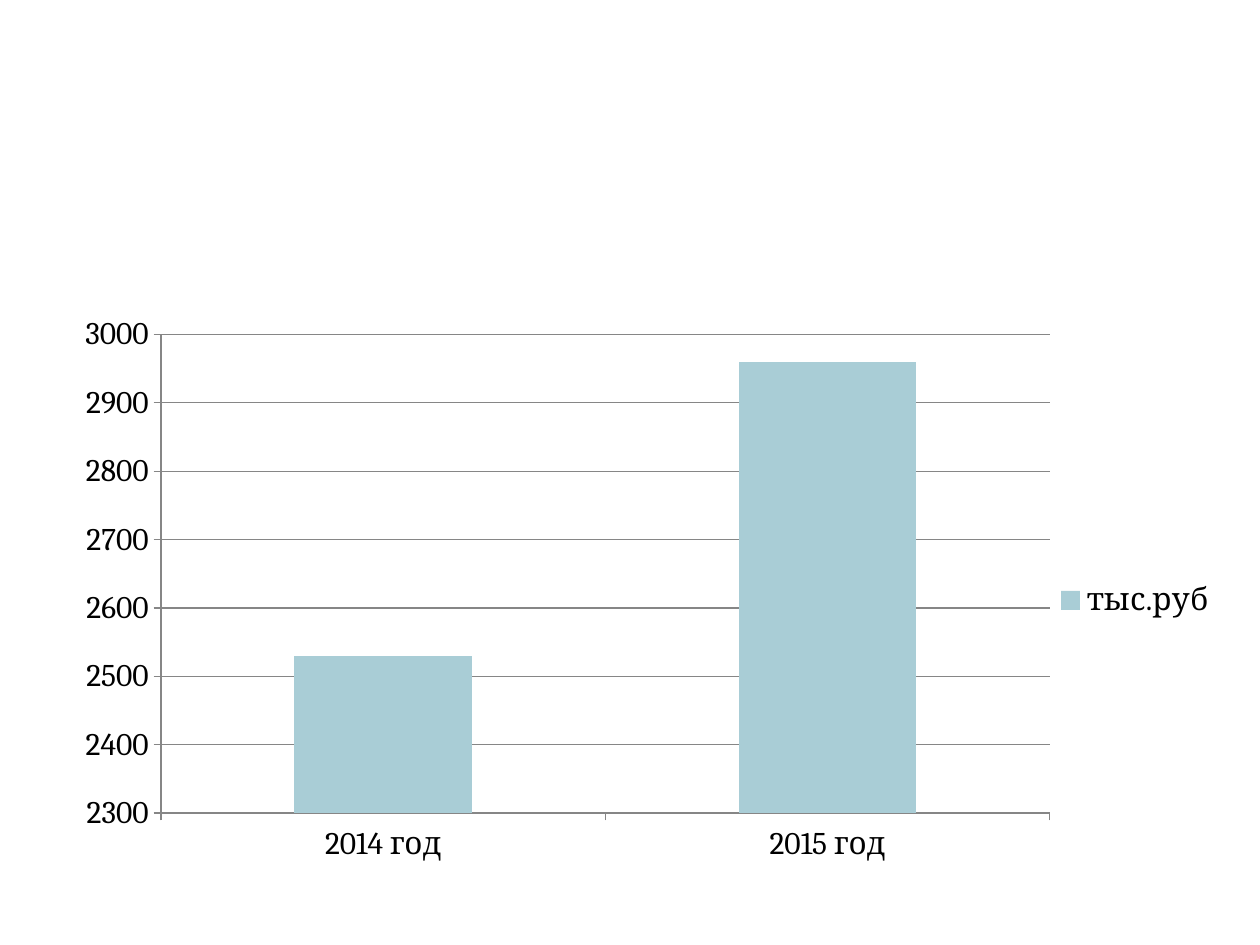
from dataclasses import dataclass

from lxml import etree
from pptx import Presentation
from pptx import util as u
from pptx.chart.data import CategoryChartData
from pptx.dml.color import RGBColor
from pptx.enum import chart as ch
from pptx.oxml.ns import qn


@dataclass(frozen=True)
class Theme:
    font: str = "Cambria"
    size: int = 18
    text: str = "000000"
    background: str = "FFFFFF"
    bar: str = "A9CDD6"
    line: str = "868686"


class SlideBuilder:
    def __init__(self, prs, theme):
        self.theme = theme
        self.s = prs.slides.add_slide(prs.slide_layouts[6])
        self.fill(self.s.background, theme.background)

    def fill(self, target, color):
        target.fill.solid()
        target.fill.fore_color.rgb = RGBColor.from_string(color)

    def line(self, target):
        target.format.line.color.rgb = RGBColor.from_string(self.theme.line)
        target.format.line.width = u.Pt(0.75)

    def place_plot(self, chart, x, y, w, h):
        """Fix the inner plot area as fractions of the chart frame."""
        area = chart.plots[0]._element.getparent()
        layout = area.find(qn("c:layout"))
        if layout is None:
            layout = etree.Element(qn("c:layout"))
            area.insert(0, layout)
        manual = etree.SubElement(layout, qn("c:manualLayout"))
        settings = dict(layoutTarget="inner", xMode="edge", yMode="edge",
                        x=x, y=y, w=w, h=h)
        for name, value in settings.items():
            etree.SubElement(manual, qn(f"c:{name}")).set("val", str(value))

    def column_chart(self, box, categories, name, values, scale, plot_area):
        # Data
        data = CategoryChartData()
        data.categories = categories
        data.add_series(name, values)
        chart = self.s.shapes.add_chart(
            ch.XL_CHART_TYPE.COLUMN_STACKED, *map(u.Inches, box), data).chart

        # Type and legend
        chart.has_title = False
        chart.font.name = self.theme.font
        chart.font.size = u.Pt(self.theme.size)
        chart.font.color.rgb = RGBColor.from_string(self.theme.text)
        chart.has_legend = True
        chart.legend.position = ch.XL_LEGEND_POSITION.RIGHT
        chart.legend.include_in_layout = False

        # Columns
        plot = chart.plots[0]
        plot.gap_width, plot.overlap = 150, 100
        plot.vary_by_categories = False
        self.fill(plot.series[0].format, self.theme.bar)

        # Axes
        for axis in (chart.category_axis, chart.value_axis):
            axis.major_tick_mark = ch.XL_TICK_MARK.OUTSIDE
            axis.minor_tick_mark = ch.XL_TICK_MARK.NONE
            self.line(axis)
        axis = chart.value_axis
        axis.minimum_scale, axis.maximum_scale, axis.major_unit = scale
        axis.has_major_gridlines = True
        self.line(axis.major_gridlines)
        axis.tick_labels.number_format = "General"
        axis.tick_labels.number_format_is_linked = False
        self.place_plot(chart, *plot_area)


def main():
    prs = Presentation()
    prs.slide_width, prs.slide_height = u.Inches(10), u.Inches(7.5)
    slide = SlideBuilder(prs, Theme())

    # Yearly amounts
    slide.column_chart(
        box=(0.23, 2.42, 9.53, 4.69),
        categories=["2014 год", "2015 год"],
        name="тыс.руб",
        values=[2530, 2960],
        scale=(2300, 3000, 100),
        plot_area=(0.11, 0.05, 0.74, 0.81),
    )
    prs.save("out.pptx")


if __name__ == "__main__":
    main()
